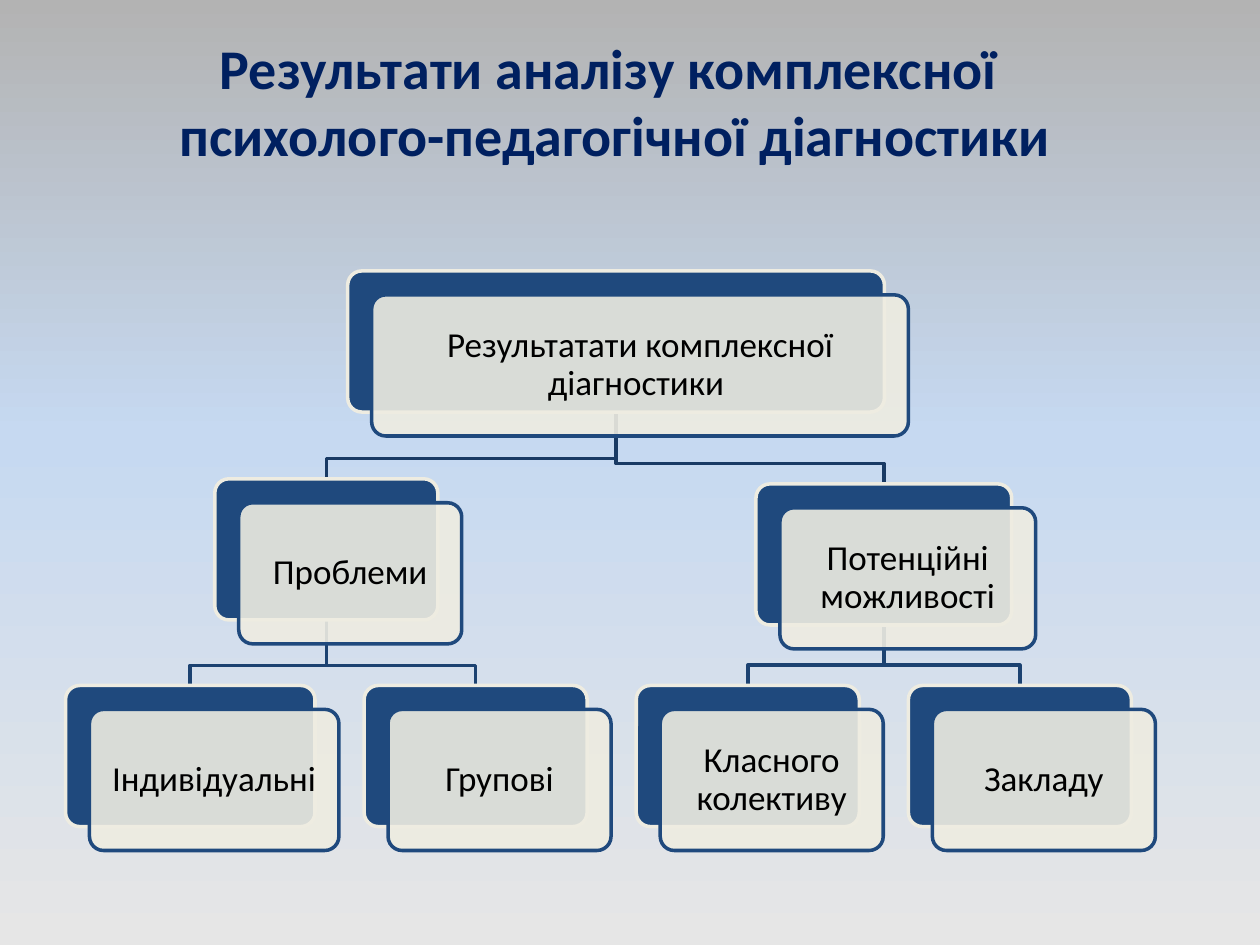
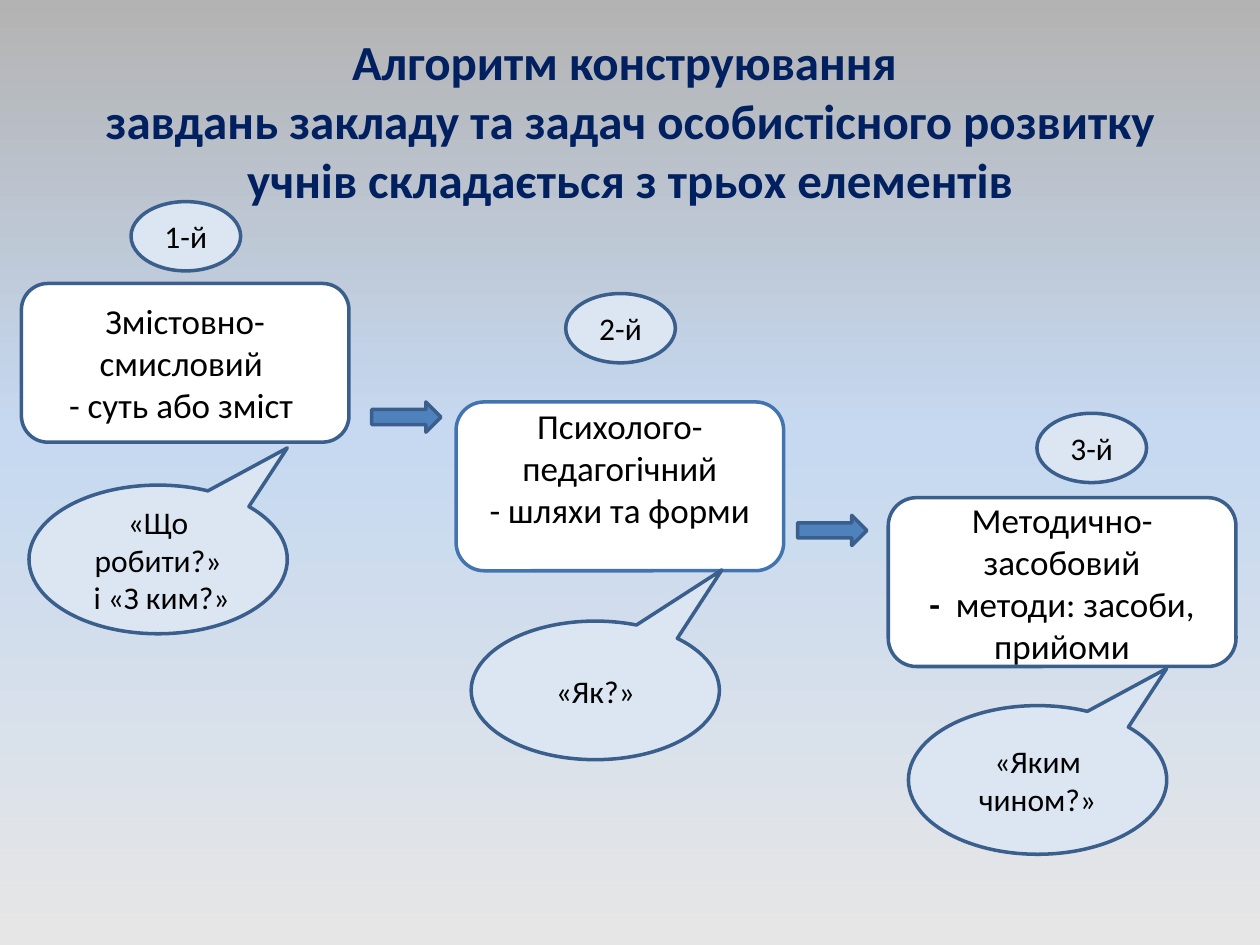
from copy import deepcopy

from pptx import Presentation
from pptx.dml.color import RGBColor
from pptx.enum.shapes import MSO_SHAPE as Kind
from pptx.enum.text import MSO_ANCHOR as Anchor, MSO_AUTO_SIZE as Fit, PP_ALIGN as Align
from pptx.oxml.ns import qn
from pptx.oxml.xmlchemy import OxmlElement as Tag
from pptx.util import Inches, Pt

FONT = "Calibri"
BLACK, NAVY, DARK, CREAM = "000000", "002060", "1F497D", "EEECE1"
WHITE, PALE, BLUE, EDGE = "FFFFFF", "DCE6F2", "4F81BD", "3A5F8C"
SKY = [(0, "B3B3B3"), (0.46, "C6D9F1"), (1, "E6E6E6")]
CARD_H, SHIFT, GAP, BEND = 1.12, 0.19, 0.39, 0.16

LEAVES = [("Індивідуальні", 1.98), ("Групові", 1.77),
          ("Класного колективу", 1.77), ("Закладу", 1.77)]
TWIGS = [("Проблеми", 1.77, 1.65), ("Потенційні можливості", 2.03, 1.69)]
ROOT = ("Результатати комплексної діагностики ", 4.26, 4.37)

STEPS = [
    dict(box=(0.17, 2.25, 2.6, 1.26), badge=(0.87, -0.65), call=(0.06, 1.6, 2.05, 1.18),
         tip=(0.5, -0.75), lines=["Змістовно-смисловий ", "- суть або зміст "],
         ask=["«Що робити?»", " і «З ким?»"]),
    dict(box=(3.62, 3.19, 2.6, 1.34), badge=(0.87, -0.86), call=(0.12, 1.74, 1.97, 1.1),
         tip=(0.51, -0.87), lines=["Психолого-педагогічний", "- шляхи та форми"],
         ask=["«Як?»"], edge="4274AF", foot=0.35),
    dict(box=(7.05, 3.95, 2.76, 1.34), badge=(1.18, -0.67), call=(0.16, 1.65, 2.05, 1.18),
         tip=(0.5, -0.75), lines=["Методично-засобовий", "*-  *методи: засоби, прийоми"],
         ask=["«Яким чином?»"]),
]
ARROWS = [(2.95, 3.19), (6.33, 4.09)]


def color(hexa):
    """Turn a hex string into a colour."""
    return RGBColor.from_string(hexa)


def write(shape, lines, size=20, ink=BLACK, bold=False, space=1.0, pad=None, foot=None):
    """Fill a shape with centred lines; asterisks switch bold."""
    frame = shape.text_frame
    frame.word_wrap, frame.auto_size = True, Fit.NONE
    frame.vertical_anchor = Anchor.MIDDLE
    if pad is not None:
        frame.margin_left = frame.margin_right = Inches(pad)
        frame.margin_top = frame.margin_bottom = Inches(pad)
    if foot is not None:
        frame.margin_bottom = Inches(foot)
    for row, line in enumerate(lines):
        para = frame.add_paragraph() if row else frame.paragraphs[0]
        para.alignment, para.line_spacing = Align.CENTER, space
        for turn, part in enumerate(line.split("*")):
            if part:
                run = para.add_run()
                run.text = part
                font = run.font
                font.name, font.size = FONT, Pt(size)
                font.bold = bold != bool(turn % 2)
                font.color.rgb = color(ink)


def outline(shape, hexa):
    """Give a shape a two-point line without shadow."""
    shape.shadow.inherit = False
    shape.line.color.rgb = color(hexa)
    shape.line.width = Pt(2)


def draw(slide, kind, box, fill, edge, adjust=(), alpha=None):
    """Add a filled preset shape in the box."""
    shape = slide.shapes.add_shape(kind, *map(Inches, box))
    for spot, value in enumerate(adjust):
        shape.adjustments[spot] = value
    shape.fill.solid()
    shape.fill.fore_color.rgb = color(fill)
    if alpha:
        tag = Tag("a:alpha")
        tag.set("val", str(alpha * 1000))
        shape.element.spPr.find(qn("a:solidFill"))[0].append(tag)
    outline(shape, edge)
    return shape


def titled(deck, box, lines, size):
    """Add a slide with a bold navy title."""
    slide = deck.slides.add_slide(deck.slide_layouts[5])
    title = slide.shapes.title
    title.left, title.top, title.width, title.height = map(Inches, box)
    write(title, lines, size, NAVY, bold=True)
    return slide


def paint(master):
    """Set the shared gradient background."""
    fill = master.background.fill
    fill.gradient()
    fill.gradient_angle = 270
    stops = master.element.find(".//" + qn("a:gsLst"))
    stops.append(deepcopy(stops[0]))
    for stop, (place, hexa) in zip(fill.gradient_stops, SKY):
        stop.position = place
        stop.color.rgb = color(hexa)


def link(slide, start, end, hexa):
    """Draw a stepped line from a parent to the top of its child."""
    (x, y), (to, top) = start, end
    pen = slide.shapes.build_freeform(Inches(x), Inches(y))
    turns = [(x, top - BEND), (to, top - BEND), (to, top)]
    pen.add_line_segments([(Inches(a), Inches(b)) for a, b in turns], close=False)
    shape = pen.convert_to_shape()
    shape.fill.background()
    outline(shape, hexa)


def card(slide, label, mid, top, wide):
    """Draw a dark card with a labelled pale card over it."""
    left = mid - wide / 2
    draw(slide, Kind.ROUNDED_RECTANGLE, (left, top, wide, CARD_H), DARK, CREAM, [0.1])
    front = draw(slide, Kind.ROUNDED_RECTANGLE, (left + SHIFT, top + SHIFT, wide, CARD_H),
                 CREAM, DARK, [0.1], alpha=90)
    write(front, [label], space=0.9, pad=0.08)


def tree(slide, left, top):
    """Draw the three-level tree from its top left corner."""
    low, edge, ends, leaves = top + 3.29, left, [], []
    for label, wide in LEAVES:
        leaves.append((label, edge + wide / 2, low, wide))
        ends.append((edge, edge + wide))
        edge += wide + GAP
    name, wide, mid = ROOT
    root = (name, left + mid, top, wide)
    twigs = []
    for side, (label, wide, drop) in enumerate(TWIGS):
        mid = (ends[2 * side][0] + ends[2 * side + 1][1]) / 2
        twigs.append((label, mid, top + drop, wide))
        link(slide, (root[1], top + CARD_H), (mid, top + drop), "193A64")
        for leaf in leaves[2 * side:2 * side + 2]:
            link(slide, (mid, top + drop + CARD_H), leaf[1:3], "1C4271")
    for node in [root, *twigs, *leaves]:
        card(slide, *node)


def step(slide, mark, box, badge, call, tip, lines, ask, edge=EDGE, foot=None):
    """Draw a step box with its number and question placed relative to it."""
    x, y = box[:2]
    body = draw(slide, Kind.ROUNDED_RECTANGLE, box, WHITE, edge)
    write(body, lines, foot=foot)
    spot = (x + badge[0], y + badge[1], 0.87, 0.55)
    write(draw(slide, Kind.OVAL, spot, PALE, EDGE), [mark], 18)
    spot = (x + call[0], y + call[1], *call[2:])
    write(draw(slide, Kind.OVAL_CALLOUT, spot, PALE, EDGE, tip), ask, 18)


def main():
    """Build and save both slides."""
    deck = Presentation()
    deck.slide_width, deck.slide_height = Inches(10), Inches(7.5)
    paint(deck.slide_master)

    slide = titled(deck, (0.59, 0.21, 8.58, 1.18),
                   ["Результати аналізу комплексної ",
                    "психолого-педагогічної діагностики"], 32)
    tree(slide, 0.52, 2.15)

    slide = titled(deck, (0.5, 0.3, 9, 1.3),
                   ["Алгоритм конструювання ",
                    "завдань закладу та задач особистісного розвитку "
                    "учнів складається з трьох елементів"], 28)
    for count, part in enumerate(STEPS, 1):
        step(slide, f"{count}-й", **part)
    for spot in ARROWS:
        draw(slide, Kind.RIGHT_ARROW, (*spot, 0.55, 0.24), BLUE, EDGE)

    deck.save("out.pptx")


if __name__ == "__main__":
    main()
